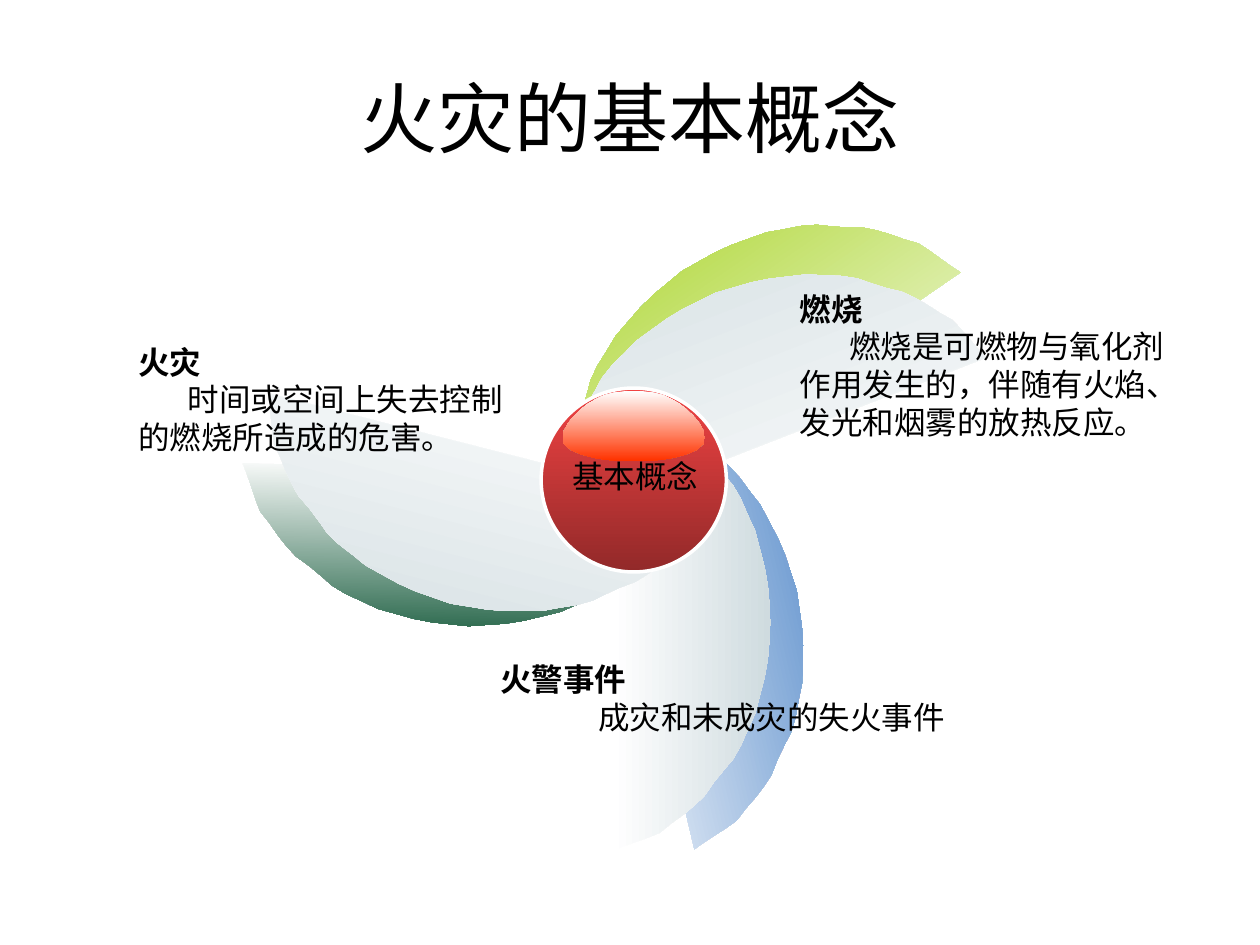
import pptx
import pptx.util
import pptx.dml.color
import pptx.enum.shapes
import pptx.enum.text

# Grid: 10 columns by 7.5 rows
COL = ROW = pptx.util.Inches(1)
FONT = "Arial"
INSET = 0.1

# Half outlines, as shares of a box; the other half mirrors them
BLADE = [(0, 0), (.07, .01), (.15, .02), (.23, .03), (.3, .04), (.37, .06),
         (.45, .08), (.52, .1), (.58, .12), (.64, .15), (.71, .18), (.76, .2),
         (.81, .23), (.86, .27), (.9, .3), (.93, .34), (.96, .38), (.98, .42),
         (.99, .46), (1, .5)]
GLOSS = [(.5, 0), (.57, 0), (.64, .02), (.71, .06), (.77, .12), (.82, .18),
         (.87, .26), (.92, .36), (.96, .46), (.99, .57), (1, .67), (.99, .76),
         (.94, .85), (.87, .91), (.78, .96), (.69, .99), (.6, 1), (.5, 1)]

# Blade centres from the hub centre: across, down, turn, colour
BLADES = [
    (.68, 1.02, 346.8, "447EC4"),
    (-1.3, .53, 91, "2A684C"),
    (.74, -1.14, 235.5, "99CC00"),
    (.46, 1.13, 0, "CFDBDF"),
    (-1.3, .37, 104.3, "CFDBDF"),
    (.88, -.9, 248.7, "CFDBDF"),
]

NOTES = [
    ((3.87, 5.19, 3.92, .7), "火警事件", "成灾和未成灾的失火事件", .78),
    ((1, 2.67, 3.17, 1), "火灾", "时间或空间上失去控制的燃烧所造成的危害。", .39),
    ((6.25, 2.25, 3.17, 1.6), "燃烧",
     "燃烧是可燃物与氧化剂作用发生的，伴随有火焰、发光和烟雾的放热反应。", .39),
]


def tint(code):
    return pptx.dml.color.RGBColor.from_string(code)


def span(box):
    x, y, w, h = box
    return int(x * COL), int(y * ROW), int(w * COL), int(h * ROW)


def around(x, y, w, h):
    """Box of the given size about a centre."""
    return x - w / 2, y - h / 2, w, h


def shade(shape, first, last, angle):
    shape.shadow.inherit = False
    fill = shape.fill
    fill.gradient()
    fill.gradient_angle = (360 - angle) % 360
    for stop, code in zip(fill.gradient_stops, (first, last)):
        stop.color.rgb = tint(code)
    shape.line.fill.background()


def outline(slide, box, shares):
    x, y, w, h = span(box)
    dots = [(int(x + a * w), int(y + b * h)) for a, b in shares]
    pen = slide.shapes.build_freeform(*dots[0])
    pen.add_line_segments(dots[1:], close=True)
    return pen.convert_to_shape()


def write(para, text, size, bold=False):
    run = para.add_run()
    run.text = text
    run.font.name = FONT
    run.font.size = pptx.util.Pt(size)
    run.font.bold = bold
    run.font.color.rgb = tint("000000")


def label(slide, box, text, size, wrap=True):
    """Centred single line."""
    frame = slide.shapes.add_textbox(*span(box)).text_frame
    frame.word_wrap = wrap
    frame.vertical_anchor = pptx.enum.text.MSO_ANCHOR.MIDDLE
    para = frame.paragraphs[0]
    para.alignment = pptx.enum.text.PP_ALIGN.CENTER
    write(para, text, size)


def note(slide, box, head, body, indent):
    """Bold term, then its meaning with a first-line indent."""
    frame = slide.shapes.add_textbox(*span(box)).text_frame
    frame.word_wrap = True
    write(frame.paragraphs[0], head, 18, True)
    para = frame.add_paragraph()
    props = para._p.get_or_add_pPr()
    props.set("marL", "0")
    props.set("indent", str(int(indent * COL)))
    write(para, body, 18)


def wheel(slide, box):
    x, y, w, h = box
    mx, my = x + w / 2, y + h / 2

    # Blades: coloured ones behind, pale ones in front
    curve = BLADE + [(a, 1 - b) for a, b in BLADE[-2::-1]]
    for dx, dy, turn, code in BLADES:
        blade = outline(slide, around(mx + dx, my + dy, 1.26, 3.63), curve)
        blade.rotation = turn
        shade(blade, "FFFFFF", code, 0)

    # Hub
    hub = slide.shapes.add_shape(pptx.enum.shapes.MSO_SHAPE.OVAL,
                                 *span(around(mx, my, 1.47, 1.46)))
    shade(hub, "F14343", "922929", 90)
    hub.line.color.rgb = tint("FFFFFF")
    hub.line.width = pptx.util.Pt(2)

    # Gloss on the hub
    curve = GLOSS + [(1 - a, b) for a, b in GLOSS[-2:0:-1]]
    gloss = outline(slide, around(mx, my - .43, 1.13, .55), curve)
    shade(gloss, "FFFFFF", "FF3300", 90)

    label(slide, around(mx + .01, my - .03, 1.2, .4), "基本概念", 18, False)


def main():
    deck = pptx.Presentation()
    deck.slide_width, deck.slide_height = 10 * COL, int(7.5 * ROW)
    slide = deck.slides.add_slide(deck.slide_layouts[6])

    label(slide, (.5, .3, 9, 1.25), "火灾的基本概念", 44)
    wheel(slide, (1.83, .81, 6.4, 6))
    for item in NOTES:
        note(slide, *item)

    deck.save("out.pptx")


if __name__ == "__main__":
    main()
